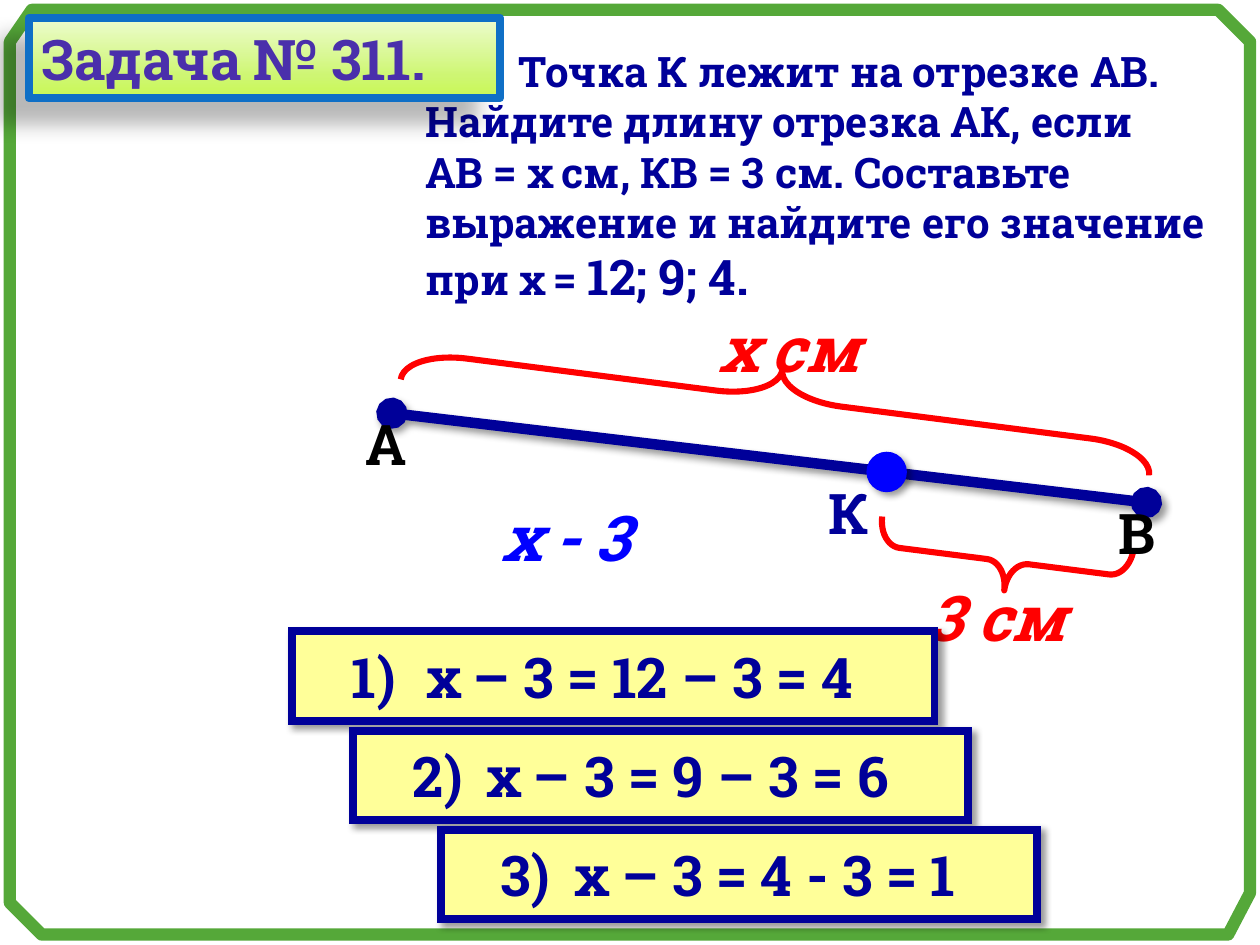
from copy import deepcopy
from lxml.etree import SubElement
from pptx import Presentation
from pptx.dml.color import RGBColor
from pptx.enum.shapes import MSO_CONNECTOR, MSO_SHAPE
from pptx.enum.text import MSO_ANCHOR, PP_ALIGN
from pptx.oxml.ns import qn
from pptx.util import Cm, Pt

FONT = "Roboto Slab"
NAVY = RGBColor(0x00, 0x00, 0x99)
BLUE = RGBColor(0x00, 0x00, 0xFF)
RED = RGBColor(0xFF, 0x00, 0x00)
BLACK = RGBColor(0x00, 0x00, 0x00)
GREEN = RGBColor(0x55, 0xA8, 0x39)
YELLOW = RGBColor(0xFF, 0xFF, 0x99)
AZURE = RGBColor(0x0F, 0x6F, 0xC6)
PURPLE = RGBColor(0x4A, 0x2F, 0xAB)
ORANGE = RGBColor(0xFF, 0x99, 0x00)
CYAN = RGBColor(0x00, 0xFF, 0xFF)
LIMES = [(0, RGBColor(0xED, 0xFC, 0xCF)), (0.72, RGBColor(0xCE, 0xF6, 0x73)),
         (1, RGBColor(0xC9, 0xF8, 0x53))]


def write(para, text, size, color):
    run = para.add_run()
    run.text = text
    font = run.font
    font.name, font.size, font.bold = FONT, Pt(size), True
    font.color.rgb = color
    return run


def shade(shape, alpha=40, blur=4, dist=3, angle=45):
    props = shape.element.spPr
    for old in props.findall(qn("a:effectLst")):
        props.remove(old)
    glow = SubElement(SubElement(props, qn("a:effectLst")), qn("a:outerShdw"),
                      blurRad=str(Pt(blur)), dist=str(Pt(dist)),
                      dir=str(angle * 60000), algn="ctr", rotWithShape="0")
    tint = SubElement(glow, qn("a:srgbClr"), val="000000")
    SubElement(tint, qn("a:alpha"), val=str(alpha * 1000))


deck = Presentation()
deck.slide_width, deck.slide_height = Cm(25.4), Cm(19.05)
slide = deck.slides.add_slide(deck.slide_layouts[6])
shapes = slide.shapes

# Green frame with cut corners
edge = [(0.2, 0.84), (0.2, 18.2), (0.84, 18.84), (24.76, 18.84),
        (25.2, 18), (25.2, 0.84), (24.56, 0.2), (0.64, 0.2)]
spots = [(Cm(x), Cm(y)) for x, y in edge]
pen = shapes.build_freeform(*spots[0])
pen.add_line_segments(spots[1:], close=True)
frame = pen.convert_to_shape()
frame.shadow.inherit = False
frame.fill.background()
frame.line.color.rgb, frame.line.width = GREEN, Pt(7)

# Problem text
task = shapes.add_textbox(Cm(8.33), Cm(0.79), Cm(18), Cm(5.56)).text_frame
task.word_wrap = True
para = task.paragraphs[0]
para._p.get_or_add_pPr().set("indent", str(Cm(1.88)))
write(para, "Точка К лежит на отрезке АВ. Найдите длину отрезка АК, если", 24, NAVY)
para = task.add_paragraph()
write(para, "АВ = х см, КВ = 3 см. Составьте выражение и найдите его значение при х = ",
      24, NAVY)
write(para, "12; 9; 4.", 28, NAVY)

# Segment AB with round ends
seg = shapes.add_connector(MSO_CONNECTOR.STRAIGHT, Cm(7.9), Cm(8.33),
                           Cm(23.11), Cm(10.13))
seg.line.color.rgb, seg.line.width = NAVY, Pt(6)
for end in ("a:headEnd", "a:tailEnd"):
    SubElement(seg.line._get_or_add_ln(), qn(end), type="oval")
shade(seg)

# Point K
dot = shapes.add_shape(MSO_SHAPE.OVAL, Cm(17.48), Cm(9.12), Cm(0.79), Cm(0.79))
dot.fill.solid()
dot.fill.fore_color.rgb = dot.line.color.rgb = BLUE
dot.line.width = Pt(0.75)
shade(dot)

# Braces over AB and under KB
for x, y, high, turn, curl, mid, flip in [
        (15.11, 0.43, 15.21, 97.3, 1.086, 0.5, False),
        (19.66, 8.76, 5.11, 277.2, 0.364, 0.486, True)]:
    brace = shapes.add_shape(MSO_SHAPE.LEFT_BRACE, Cm(x), Cm(y), Cm(1.17), Cm(high))
    brace.adjustments[0], brace.adjustments[1] = curl, mid
    brace.rotation = turn
    if flip:
        brace.element.spPr.xfrm.set("flipV", "1")
    brace.shadow.inherit = False
    brace.fill.background()
    brace.line.color.rgb, brace.line.width = RED, Pt(3.5)

# Point names
for name, x, y, color in [("А", 7.11, 8.13, BLACK), ("В", 22.3, 9.93, BLACK),
                          ("К", 16.46, 9.53, NAVY)]:
    box = shapes.add_textbox(Cm(x), Cm(y), Cm(1.38), Cm(1.62)).text_frame
    box.word_wrap = False
    write(box.paragraphs[0], name, 32, color)

# Lengths, outlined italics
for text, x, y, wide, high, color, rim in [
        ("х см", 14.3, 6.12, 3.2, 1, RED, ORANGE),
        ("3 см", 18.49, 11.53, 3.2, 1.2, RED, ORANGE),
        ("х - 3", 9.09, 9.93, 4.6, 1.6, BLUE, CYAN)]:
    box = shapes.add_textbox(Cm(x), Cm(y), Cm(wide), Cm(high)).text_frame
    box.word_wrap = False
    box.margin_left = box.margin_right = 0
    para = box.paragraphs[0]
    para.alignment = PP_ALIGN.CENTER
    run = write(para, text, 36, color)
    run.font.italic = True
    props = run.font._element
    line = SubElement(props, qn("a:ln"), w=str(Pt(1.5)))
    SubElement(SubElement(line, qn("a:solidFill")), qn("a:srgbClr"), val=str(rim))
    props.insert(0, line)

# Answers, stepped to the right
answers = [("х – 3 = 12 – 3 = 4", 5.89, 12.95), ("х – 3 = 9 – 3 = 6", 7.11, 12.4),
           ("х – 3 = 4 - 3 = 1", 8.89, 12.01)]
for i, (text, x, wide) in enumerate(answers):
    card = shapes.add_shape(MSO_SHAPE.RECTANGLE, Cm(x), Cm(12.73 + 2 * i),
                            Cm(wide), Cm(1.8))
    card.fill.solid()
    card.fill.fore_color.rgb = YELLOW
    card.line.color.rgb, card.line.width = NAVY, Pt(4.5)
    SubElement(card.line._get_or_add_ln(), qn("a:miter"), lim="800000")
    shade(card)
    body = card.text_frame
    body.word_wrap = True
    body.margin_left = Cm(1.2)
    body.vertical_anchor = MSO_ANCHOR.MIDDLE
    para = body.paragraphs[0]
    para.alignment = PP_ALIGN.LEFT
    props = para._p.get_or_add_pPr()
    props.set("marL", str(Cm(1.5)))
    props.set("indent", str(-Cm(1.5)))
    write(para, f"{i + 1})\t{text}", 32, NAVY)

# Title plate
plate = shapes.add_shape(MSO_SHAPE.RECTANGLE, Cm(0.58), Cm(0.36), Cm(9.5), Cm(1.62))
plate.fill.gradient()
plate.fill.gradient_angle = 270
stops = plate.element.spPr.find(".//" + qn("a:gsLst"))
stops.append(deepcopy(stops[-1]))
for stop, (place, color) in zip(plate.fill.gradient_stops, LIMES):
    stop.position, stop.color.rgb = place, color
plate.line.color.rgb, plate.line.width = AZURE, Pt(4.5)
shade(plate, 28, 11.8, 19.7, 141)
body = plate.text_frame
body.word_wrap = False
body.vertical_anchor = MSO_ANCHOR.TOP
para = body.paragraphs[0]
para.alignment = PP_ALIGN.LEFT
write(para, "Задача № 311.", 32, PURPLE)

deck.save("out.pptx")
